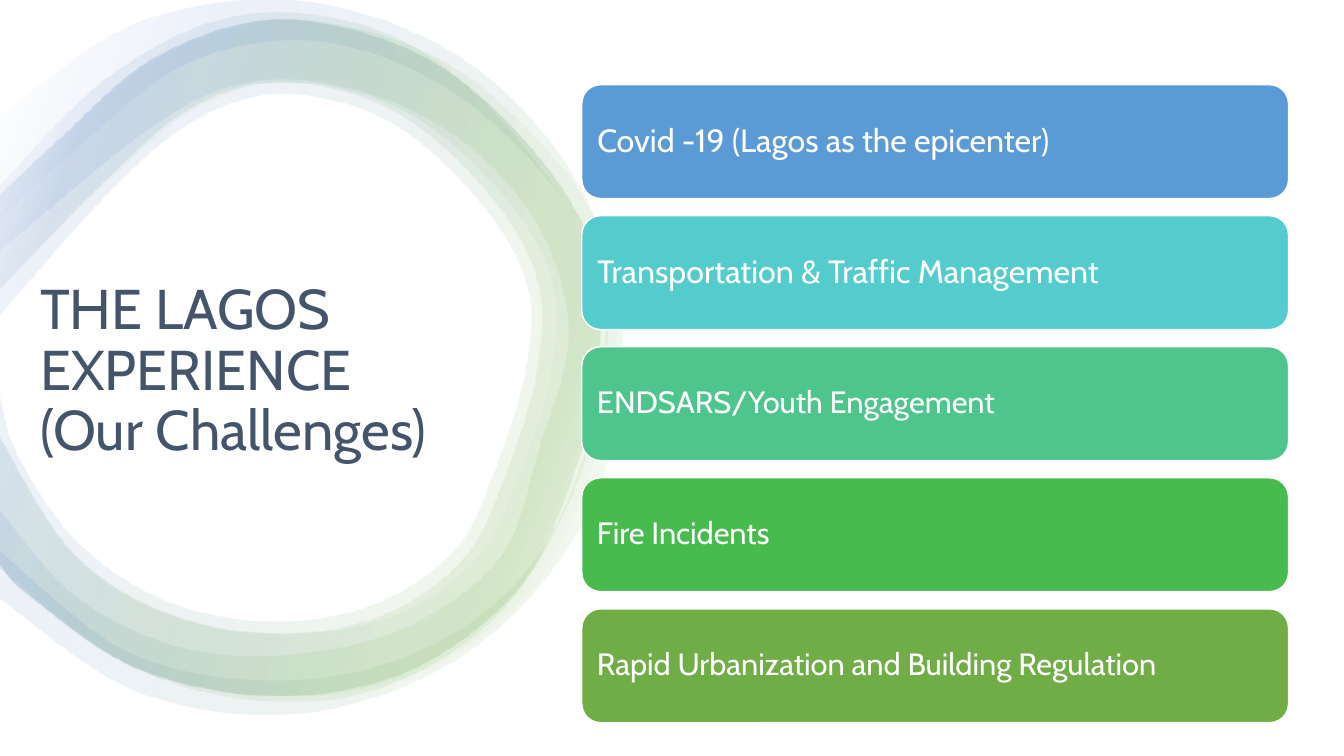
from math import acos, cos, sin

from lxml.etree import Element, SubElement
from pptx import Presentation
from pptx.dml.color import RGBColor
from pptx.enum.shapes import MSO_SHAPE
from pptx.enum.text import MSO_ANCHOR, PP_ALIGN
from pptx.oxml.ns import qn
from pptx.util import Inches, Pt

FONT = "Cabin"
WHITE, GREEN, BLUE = "FFFFFF", "70AD47", "4472C4"
EDGE = -0.01
CARD_LEFT, CARD_TOP, CARD_WIDTH, CARD_HEIGHT, CARD_STEP = 5.77, 0.84, 7.01, 1.13, 1.3

CARDS = [
    ("Covid -19 (Lagos as the epicenter)", "5B9BD5", 23),
    ("Transportation & Traffic Management", "54CCCD", 23),
    ("ENDSARS/Youth Engagement", "4DC58D", 22),
    ("Fire Incidents", "48BB4F", 22),
    ("Rapid Urbanization and Building Regulation", GREEN, 22),
]

SOFT_OUTER = [
    (EDGE, 1.85), (1.08, 0.76), (2.33, 0.16), (3.72, 0.29), (4.88, 1.1), (5.93, 2.64),
    (5.93, 3.97), (5.53, 5.2), (4.81, 6.21), (3.65, 6.86), (2.33, 6.92), (1.1, 6.5),
    (EDGE, 5.62),
]
SOFT_INNER = [
    (EDGE, 5.04), (0.75, 5.91), (1.8, 6.42), (2.96, 6.48), (4.06, 6.2), (4.96, 5.51),
    (5.34, 4.43), (5.63, 3.3), (5.32, 2.23), (4.54, 1.37), (3.52, 0.89), (2.45, 0.82),
    (1.49, 1.27), (EDGE, 2.5),
]
BAND_OUTER = [
    (EDGE, 1.94), (0.58, 1.4), (1.59, 0.56), (2.85, 0.19), (4.27, 0.54), (5.37, 1.43),
    (6.04, 2.53), (6.05, 3.87), (5.66, 5.15), (5.14, 5.98), (4.09, 6.68), (2.78, 6.9),
    (1.4, 6.63), (0.28, 5.89), (EDGE, 5.57),
]
BAND_INNER = [
    (EDGE, 4.31), (0.72, 5.46), (1.66, 6.07), (2.78, 6.28), (3.86, 6.11), (4.7, 5.55),
    (5.13, 4.73), (5.46, 3.66), (5.45, 2.73), (4.9, 1.84), (3.97, 1.08), (2.85, 0.81),
    (1.92, 1.08), (1.02, 1.84), (EDGE, 2.88),
]
WIDE_INNER = [
    (EDGE, 3.84), (0.17, 4.49), (0.77, 5.37), (1.66, 5.96), (2.71, 6.16), (3.71, 5.99),
    (4.5, 5.46), (4.89, 4.7), (5.22, 3.62), (5.21, 2.77), (4.69, 1.92), (3.82, 1.18),
    (2.78, 0.93), (1.9, 1.21), (1.07, 1.92), (EDGE, 3.14),
]
HALO_INNER = [
    (EDGE, 5.45), (1.19, 6.42), (2.4, 6.73), (3.65, 6.63), (4.77, 6.09), (5.51, 5.19),
    (5.93, 3.86), (5.91, 2.6), (5.21, 1.54), (4.23, 0.76), (3.07, 0.4), (1.89, 0.61),
    (0.89, 1.35), (EDGE, 2.18),
]


def rgb(value):
    """Turn a hex string into a colour."""
    return RGBColor.from_string(value)


def squeeze(points, share):
    """Scale points horizontally, keeping those on the slide's edge."""
    return [(x if x == EDGE else x * share, y) for x, y in points]


def halo_arc(cx=2.62, cy=3.54, radius=3.55, steps=10):
    """Return the part of a circle that lies right of the slide's edge."""
    reach = acos((EDGE - cx) / radius)
    angles = [reach * (2 * i / steps - 1) for i in range(steps + 1)]
    return [(cx + radius * cos(a), cy + radius * sin(a)) for a in angles]


def curve_controls(points):
    """Return both Catmull-Rom control points of every segment."""
    padded = [points[0], *points, points[-1]]
    return [
        ([q + (r - p) / 6 for p, q, r in zip(a, b, c)],
         [r - (s - q) / 6 for q, r, s in zip(b, c, d)])
        for a, b, c, d in zip(padded, padded[1:], padded[2:], padded[3:])
    ]


def bend(sp, outer, inner):
    """Turn the straight segments of both ring edges into curves."""
    controls = curve_controls(outer) + [None] + curve_controls(inner)
    for line, pair in zip(sp._element.xpath(".//a:lnTo"), controls):
        if pair is None:
            continue
        line.tag = qn("a:cubicBezTo")
        for i, (x, y) in enumerate(pair):
            line.insert(i, Element(
                qn("a:pt"), x=str(Inches(x) - sp.left), y=str(Inches(y) - sp.top)))


def add_ring(slide, outer, inner, stops):
    """Draw an open ring with a translucent gradient."""
    points = [(Inches(x), Inches(y)) for x, y in outer + inner]
    builder = slide.shapes.build_freeform(*points[0])
    builder.add_line_segments(points[1:], close=True)
    sp = builder.convert_to_shape()
    bend(sp, outer, inner)
    sp.shadow.inherit = False
    sp.line.fill.background()
    sp.fill.gradient()
    sp.fill.gradient_angle = 160
    gs_list = sp._element.xpath(".//a:gsLst")[0]
    gs_list.clear()
    for position, color in stops:
        gs = SubElement(gs_list, qn("a:gs"), pos=str(position * 1000))
        clr = SubElement(gs, qn("a:srgbClr"), val=color)
        SubElement(clr, qn("a:alpha"), val="10000")


def write(sp, text, size, color):
    """Set left-aligned, vertically centred text."""
    tf = sp.text_frame
    tf.word_wrap = True
    tf.vertical_anchor = MSO_ANCHOR.MIDDLE
    p = tf.paragraphs[0]
    p.text = text
    p.alignment = PP_ALIGN.LEFT
    p.line_spacing = 0.9
    for r in p.runs:
        r.font.name = FONT
        r.font.size = Pt(size)
        r.font.color.rgb = rgb(color)


def add_title(slide, text):
    """Add the title inside the ring."""
    sp = slide.shapes.add_textbox(Inches(0.3), Inches(2.11), Inches(4.59), Inches(3.16))
    write(sp, text, 40, "44546A")


def add_card(slide, row, text, color, size):
    """Add one rounded card in the right-hand column."""
    sp = slide.shapes.add_shape(
        MSO_SHAPE.ROUNDED_RECTANGLE, Inches(CARD_LEFT), Inches(CARD_TOP + row * CARD_STEP),
        Inches(CARD_WIDTH), Inches(CARD_HEIGHT))
    sp.shadow.inherit = False
    sp.fill.solid()
    sp.fill.fore_color.rgb = rgb(color)
    sp.line.color.rgb = rgb(WHITE)
    sp.line.width = Pt(1)
    write(sp, text, size, WHITE)
    sp.text_frame.margin_left = sp.text_frame.margin_right = Inches(size / 230)


def main():
    """Build the slide and save it."""
    prs = Presentation()
    prs.slide_width, prs.slide_height = Inches(13.33), Inches(7.5)
    slide = prs.slides.add_slide(prs.slide_layouts[6])
    narrow_outer, narrow_inner = squeeze(BAND_OUTER, 0.975), squeeze(BAND_INNER, 0.975)
    full = [(2, WHITE), (16, GREEN), (85, BLUE), (100, WHITE)]
    rings = [
        (SOFT_OUTER, SOFT_INNER, [(37, GREEN), (85, BLUE), (100, WHITE)]),
        (BAND_OUTER, BAND_INNER, [(2, WHITE), (54, GREEN), (100, WHITE)]),
        (narrow_outer, WIDE_INNER, full),
        (narrow_outer, narrow_inner, full),
        (halo_arc(), HALO_INNER, [(2, WHITE), (16, GREEN), (74, BLUE), (100, WHITE)]),
    ]
    for outer, inner, stops in rings:
        add_ring(slide, outer, inner, stops)
    add_title(slide, "THE LAGOS EXPERIENCE\v(Our Challenges)")
    for row, (text, color, size) in enumerate(CARDS):
        add_card(slide, row, text, color, size)
    prs.save("out.pptx")


if __name__ == "__main__":
    main()
